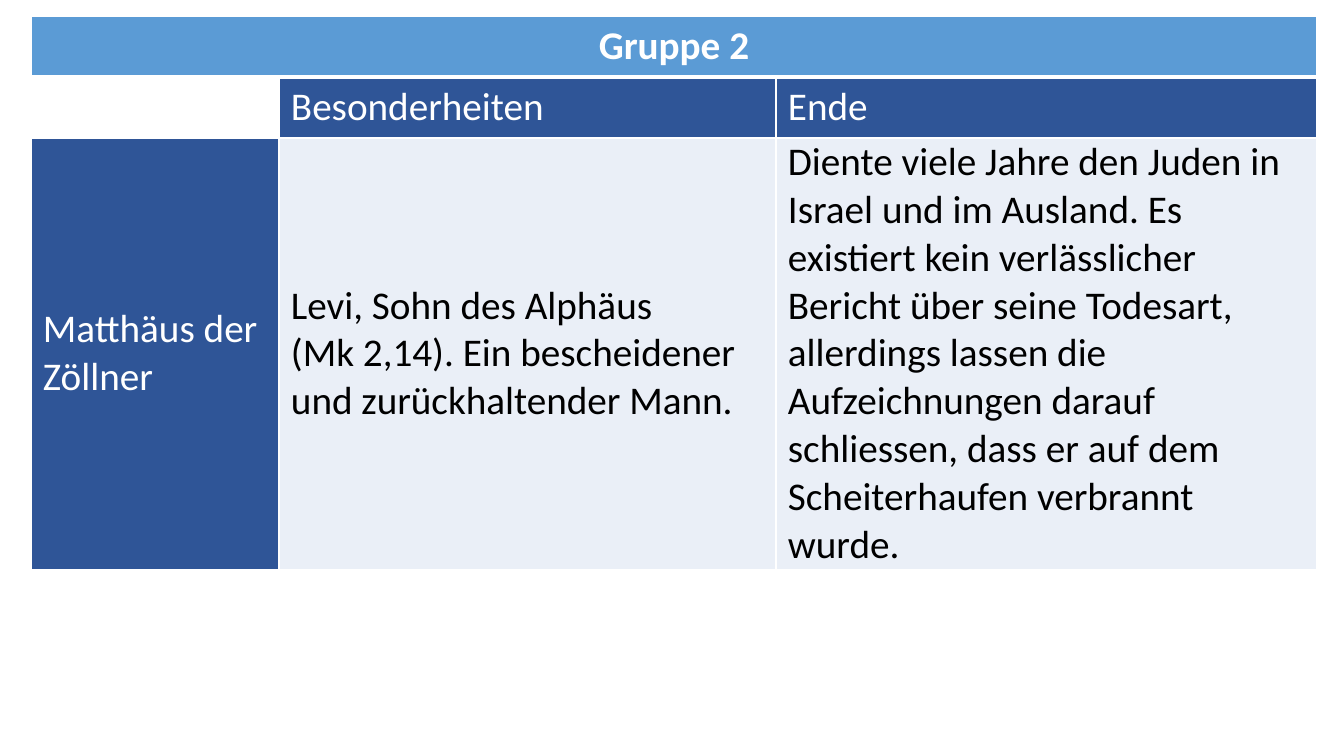
from lxml import etree
from pptx import Presentation, util as u
from pptx.dml.color import RGBColor
from pptx.enum import text
from pptx.oxml.ns import qn

# Content: each cell is (paragraphs, fill, font colour)
COLORS = {"white": "FFFFFF", "black": "000000", "title": "5B9BD5",
          "heading": "2F5597", "body": "EAEFF7"}
GROUP_TITLE = "Gruppe 2"
ROWS = [
    [([GROUP_TITLE], "title", "white"),
     ([], "title", "white"),
     ([], "title", "white")],
    [([], "white", "black"),
     (["Besonderheiten"], "heading", "white"),
     (["Ende"], "heading", "white")],
    [(["Matthäus der Zöllner"], "heading", "white"),
     (["Levi, Sohn des Alphäus",
       "(Mk 2,14). Ein bescheidener und zurückhaltender Mann."], "body", "black"),
     (["Diente viele Jahre den Juden in Israel und im Ausland. Es existiert kein "
       "verlässlicher Bericht über seine Todesart, allerdings lassen die "
       "Aufzeichnungen darauf schliessen, dass er auf dem Scheiterhaufen "
       "verbrannt wurde."], "body", "black")],
]

# Layout in px
SLIDE_SIZE = (1344, 756)
TABLE_LEFT, TABLE_TOP = 31, 16
COLUMN_WIDTHS = [248, 497, 541]
ROW_HEIGHTS = [61, 61, 423]
SIDE_MARGIN = 12
FONT, FONT_SIZE = "Calibri", 28


def px(length):
    return u.Emu(round(length * 914400 / 100.8))


def color(name):
    return RGBColor.from_string(COLORS[name])


def set_borders(cell, bottom_width):
    properties = cell._tc.get_or_add_tcPr()
    sides = [("a:lnL", 1), ("a:lnR", 1), ("a:lnT", 1), ("a:lnB", bottom_width)]
    for position, (tag, width) in enumerate(sides):
        line = etree.Element(qn(tag), w=str(u.Pt(width)))
        fill = etree.SubElement(line, qn("a:solidFill"))
        etree.SubElement(fill, qn("a:srgbClr"), val=COLORS["white"])
        properties.insert(position, line)


def fill_cell(cell, paragraphs, fill, font_color, is_title):
    cell.fill.solid()
    cell.fill.fore_color.rgb = color(fill)
    cell.margin_left = cell.margin_right = px(SIDE_MARGIN)
    cell.margin_top = cell.margin_bottom = 0
    cell.vertical_anchor = text.MSO_ANCHOR.MIDDLE
    frame = cell.text_frame
    for index, words in enumerate(paragraphs):
        paragraph = frame.add_paragraph() if index else frame.paragraphs[0]
        paragraph.alignment = text.PP_ALIGN.CENTER if is_title else text.PP_ALIGN.LEFT
        run = paragraph.add_run()
        run.text = words
        run.font.name = FONT
        run.font.size = u.Pt(FONT_SIZE)
        run.font.bold = is_title
        run.font.color.rgb = color(font_color)


def main():
    presentation = Presentation()
    presentation.slide_width, presentation.slide_height = map(px, SLIDE_SIZE)
    slide = presentation.slides.add_slide(presentation.slide_layouts[6])

    # Table grid
    table = slide.shapes.add_table(
        len(ROWS), len(COLUMN_WIDTHS), px(TABLE_LEFT), px(TABLE_TOP),
        px(sum(COLUMN_WIDTHS)), px(sum(ROW_HEIGHTS))).table
    for column, width in zip(table.columns, COLUMN_WIDTHS):
        column.width = px(width)
    for row, height in zip(table.rows, ROW_HEIGHTS):
        row.height = px(height)

    # Cells, with a thick rule under the title row
    for row_index, row in enumerate(ROWS):
        is_title = row_index == 0
        for column_index, (paragraphs, fill, font_color) in enumerate(row):
            cell = table.cell(row_index, column_index)
            fill_cell(cell, paragraphs, fill, font_color, is_title)
            set_borders(cell, 3 if is_title else 1)
    table.cell(0, 0).merge(table.cell(0, len(COLUMN_WIDTHS) - 1))

    presentation.save("out.pptx")


if __name__ == "__main__":
    main()
